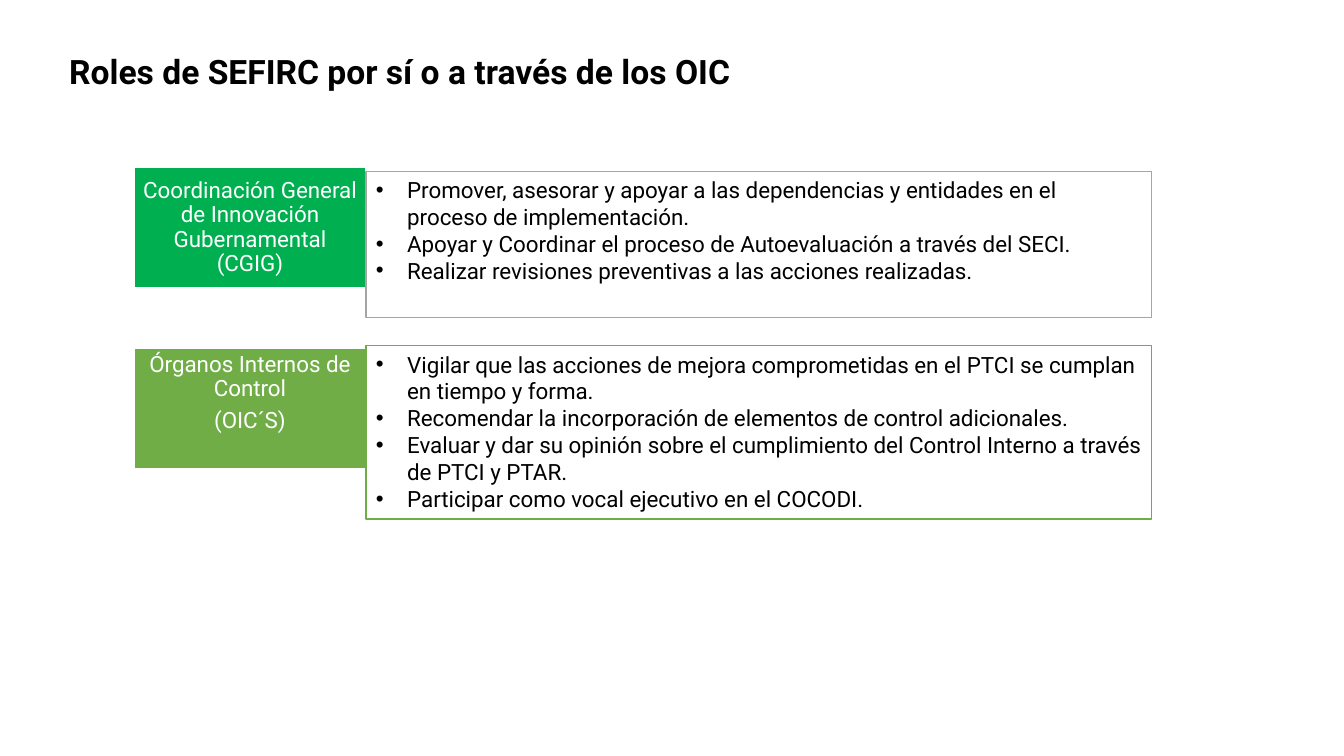
from pptx import Presentation
from pptx.dml.color import RGBColor
from pptx.enum.shapes import MSO_SHAPE as Shape
from pptx.enum.text import MSO_ANCHOR as Anchor, PP_ALIGN as Align
from pptx.oxml.ns import qn
from pptx.util import Pt
from lxml.etree import SubElement

PX = 9144
WHITE = RGBColor(255, 255, 255)
BLACK = RGBColor(0, 0, 0)
GREEN = RGBColor(0, 176, 80)
OLIVE = RGBColor(112, 173, 71)
GRAY = RGBColor(165, 165, 165)

ROLES = [
    dict(fill=GREEN, edge=GRAY, label=(166, 120), panel=(170, 145),
         pad=7, anchor=Anchor.MIDDLE,
         names=["Coordinación General de Innovación Gubernamental (CGIG)"],
         tasks=["Promover, asesorar y apoyar a las dependencias y entidades en el proceso de implementación.",
                "Apoyar y Coordinar el proceso de Autoevaluación a través del SECI.",
                "Realizar revisiones preventivas a las acciones realizadas."]),
    dict(fill=OLIVE, edge=OLIVE, label=(345, 120), panel=(343, 172),
         pad=5, anchor=Anchor.TOP,
         names=["Órganos Internos de Control", "(OIC´S)"],
         tasks=["Vigilar que las acciones de mejora comprometidas en el PTCI se cumplan en tiempo y forma.",
                "Recomendar la incorporación de elementos de control adicionales.",
                "Evaluar y dar su opinión sobre el cumplimiento del Control Interno a través de PTCI y PTAR.",
                "Participar como vocal ejecutivo en el COCODI."]),
]


def px(*sizes):
    return [size * PX for size in sizes]


def bullet(para):
    props = para._p.get_or_add_pPr()
    props.set("marL", str(31 * PX))
    props.set("indent", str(-31 * PX))
    SubElement(props, qn("a:buFont")).set("typeface", "Arial")
    SubElement(props, qn("a:buChar")).set("char", "•")


def write(shape, lines, size=16, color=BLACK, bold=False, align=Align.LEFT,
          anchor=Anchor.TOP, pad=(10, 5), space=None, after=None, dots=False):
    frame = shape.text_frame
    frame.word_wrap = True
    frame.vertical_anchor = anchor
    frame.margin_left = frame.margin_right = pad[0] * PX
    frame.margin_top = frame.margin_bottom = pad[1] * PX
    for i, line in enumerate(lines):
        para = frame.paragraphs[0] if i == 0 else frame.add_paragraph()
        para.alignment = align
        if space:
            para.line_spacing = space
        if after:
            para.space_after = Pt(after)
        if dots:
            bullet(para)
        run = para.add_run()
        run.text = line
        font = run.font
        font.name, font.size, font.bold = "Roboto", Pt(size), bold
        font.color.rgb = color


def box(slide, x, y, w, h, fill, edge, width):
    shape = slide.shapes.add_shape(Shape.RECTANGLE, *px(x, y, w, h))
    shape.shadow.inherit = False
    shape.fill.solid()
    shape.fill.fore_color.rgb = fill
    shape.line.color.rgb = edge
    shape.line.width = Pt(width)
    return shape


def role(slide, fill, edge, label, panel, pad, anchor, names, tasks):
    tag = box(slide, 133, label[0], 230, label[1], fill, WHITE, 1.5)
    write(tag, names, color=WHITE, align=Align.CENTER, anchor=anchor,
          pad=(pad, pad), space=0.9, after=5.6)
    body = box(slide, 363, panel[0], 779, panel[1], WHITE, edge, 1)
    write(body, tasks, dots=True)


def main():
    deck = Presentation()
    deck.slide_width, deck.slide_height = px(1333, 750)
    slide = deck.slides.add_slide(deck.slide_layouts[6])
    for item in ROLES:
        role(slide, **item)
    title = slide.shapes.add_textbox(*px(45, 46, 703, 50))
    write(title, ["Roles de SEFIRC por sí o a través de los OIC"],
          size=24, bold=True, align=Align.CENTER)
    deck.save("out.pptx")


if __name__ == "__main__":
    main()
